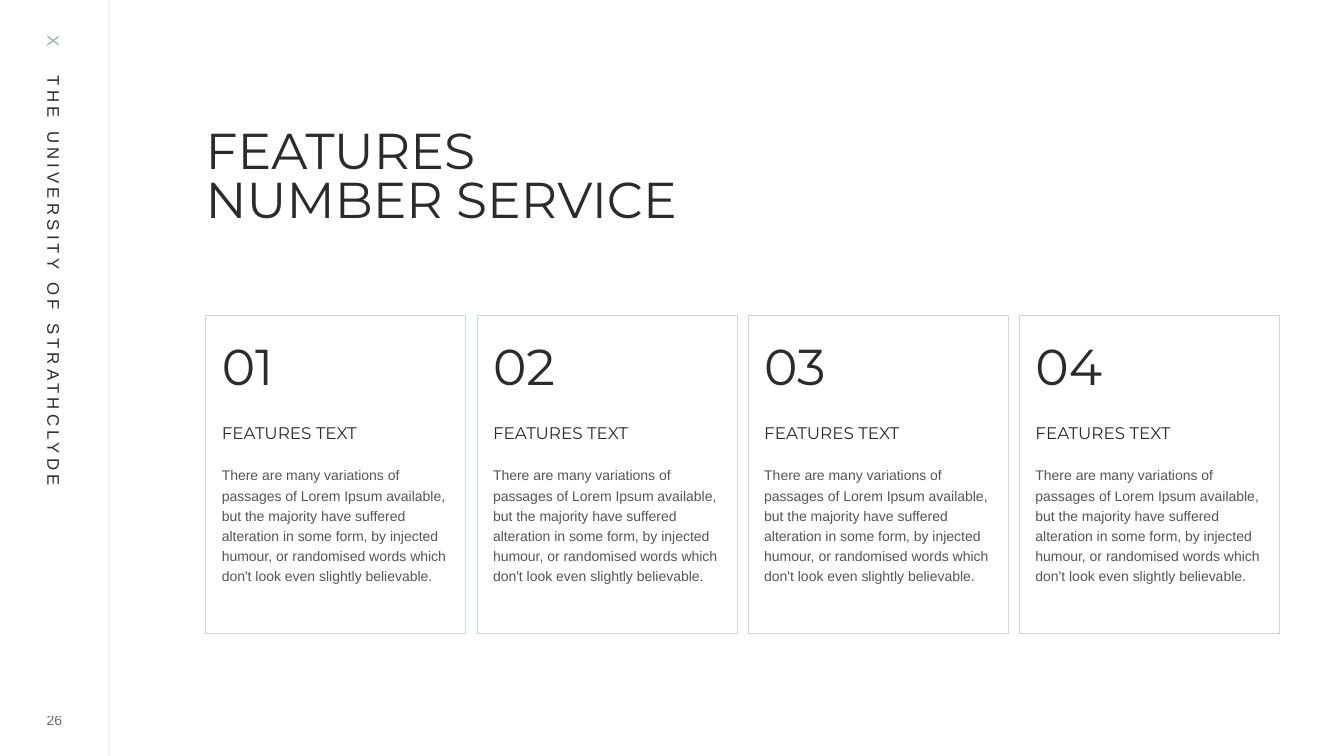
"""Build the four-card features slide."""
from lxml import etree
from pptx import Presentation
from pptx.dml.color import RGBColor
from pptx.enum.shapes import MSO_CONNECTOR, MSO_SHAPE
from pptx.enum.text import MSO_ANCHOR, MSO_AUTO_SIZE, PP_ALIGN
from pptx.oxml.ns import qn
from pptx.util import Inches, Pt

STRAIGHT, RECTANGLE = MSO_CONNECTOR.STRAIGHT, MSO_SHAPE.RECTANGLE
TOP, MIDDLE = MSO_ANCHOR.TOP, MSO_ANCHOR.MIDDLE
LEFT, CENTER = PP_ALIGN.LEFT, PP_ALIGN.CENTER
NO_FIT, GROW = MSO_AUTO_SIZE.NONE, MSO_AUTO_SIZE.SHAPE_TO_FIT_TEXT

TITLE = ["FEATURES", "NUMBER SERVICE"]
SIDE_MARK, SIDE_TEXT = "X", "THE UNIVERSITY OF STRATHCLYDE"
PAGE = "26"
BODY = (
    "There are many variations of passages of Lorem Ipsum available, "
    "but the majority have suffered alteration in some form, by injected "
    "humour, or randomised words which don't look even slightly believable."
)
CARDS = [(number, "FEATURES TEXT", BODY) for number in ("01", "02", "03", "04")]

THEME = {
    "ink": "2B2B2B", "accent": "95ACAC", "border": "CCD8D8",
    "head": "Montserrat", "text": "Arial",
    "big": 36, "label": 12, "small": 10, "line": 0.5,
}
SLIDE_W, SLIDE_H, RULE_X = 13.33, 7.5, 1.08
CARD_X, CARD_Y, CARD_W, CARD_H, CARD_STEP = 2.04, 3.13, 2.58, 3.15, 2.69
PAD = 0.16


def set_alpha(element, percent):
    color = element.find(".//" + qn("a:srgbClr"))
    etree.SubElement(color, qn("a:alpha")).set("val", str(percent * 1000))


def add_run(p, text, font, size, color="ink", alpha=100, spacing=0):
    r = p.add_run()
    r.text = text
    r.font.name = THEME[font]
    r.font.size = Pt(THEME[size])
    r.font.color.rgb = RGBColor.from_string(THEME[color])
    if alpha < 100:
        set_alpha(r.font.fill._xPr, alpha)
    if spacing:
        r.font._element.set("spc", str(spacing * 100))


def format_frame(tf, insets, anchor=TOP, fit=NO_FIT):
    tf.word_wrap = True
    tf.auto_size = fit
    tf.vertical_anchor = anchor
    tf.margin_left, tf.margin_top, tf.margin_right, tf.margin_bottom = map(Inches, insets)


def add_text(s, box, insets, anchor=TOP, fit=GROW):
    sp = s.shapes.add_textbox(*map(Inches, box))
    format_frame(sp.text_frame, insets, anchor, fit)
    return sp, sp.text_frame.paragraphs[0]


def add_sidebar(s):
    rule = s.shapes.add_connector(STRAIGHT, Inches(RULE_X), 0, Inches(RULE_X), Inches(SLIDE_H))
    rule.line.color.rgb = RGBColor.from_string(THEME["ink"])
    rule.line.width = Pt(THEME["line"])
    set_alpha(rule._element.spPr, 20)
    etree.SubElement(rule._element.spPr, qn("a:effectLst"))

    sp, p = add_text(s, (-2.3, 2.94, 5.67, 0.3), (0.1, 0.05, 0.1, 0.05))
    sp.rotation = 90
    tabs = etree.SubElement(p._p.get_or_add_pPr(), qn("a:tabLst"))
    etree.SubElement(tabs, qn("a:tab"), pos=str(Inches(0.4)), algn="l")
    add_run(p, SIDE_MARK, "text", "label", "accent", spacing=3)
    add_run(p, "\t" + SIDE_TEXT, "text", "label", spacing=3)

    sp, p = add_text(s, (0.26, 7.02, 0.56, 0.25), (0, 0, 0, 0), MIDDLE, NO_FIT)
    p.alignment = CENTER
    add_run(p, PAGE, "text", "small", alpha=70)


def add_title(s):
    sp = s.shapes.title
    sp.left, sp.top, sp.width, sp.height = map(Inches, (CARD_X, 1.09, 8.51, 1.77))
    format_frame(sp.text_frame, (0, 0.21, 0, 0))
    p = sp.text_frame.paragraphs[0]
    p.alignment = LEFT
    p.line_spacing = 0.8
    for i, line in enumerate(TITLE):
        if i:
            p.add_line_break()
        add_run(p, line, "head", "big")


def add_card(s, x, number, heading, body):
    sp = s.shapes.add_shape(RECTANGLE, *map(Inches, (x, CARD_Y, CARD_W, CARD_H)))
    sp.shadow.inherit = False
    sp.fill.background()
    sp.line.color.rgb = RGBColor.from_string(THEME["border"])
    sp.line.width = Pt(THEME["line"])
    parts = [
        (number, 3.44, 0.57, 0.7, "head", "big", 100),
        (heading, 4.2, 0.26, 0.7, "head", "label", 100),
        (body, 4.55, 1.51, 1.2, "text", "small", 80),
    ]
    for text, y, height, spacing, font, size, alpha in parts:
        box = (x + PAD, y, CARD_W - 2 * PAD, height)
        sp, p = add_text(s, box, (0, 0.05, 0, 0.05))
        p.line_spacing = spacing
        add_run(p, text, font, size, alpha=alpha)


def main():
    prs = Presentation()
    prs.slide_width, prs.slide_height = Inches(SLIDE_W), Inches(SLIDE_H)
    s = prs.slides.add_slide(prs.slide_layouts[5])
    add_sidebar(s)
    add_title(s)
    for i, card in enumerate(CARDS):
        add_card(s, CARD_X + i * CARD_STEP, *card)
    prs.save("out.pptx")


if __name__ == "__main__":
    main()
